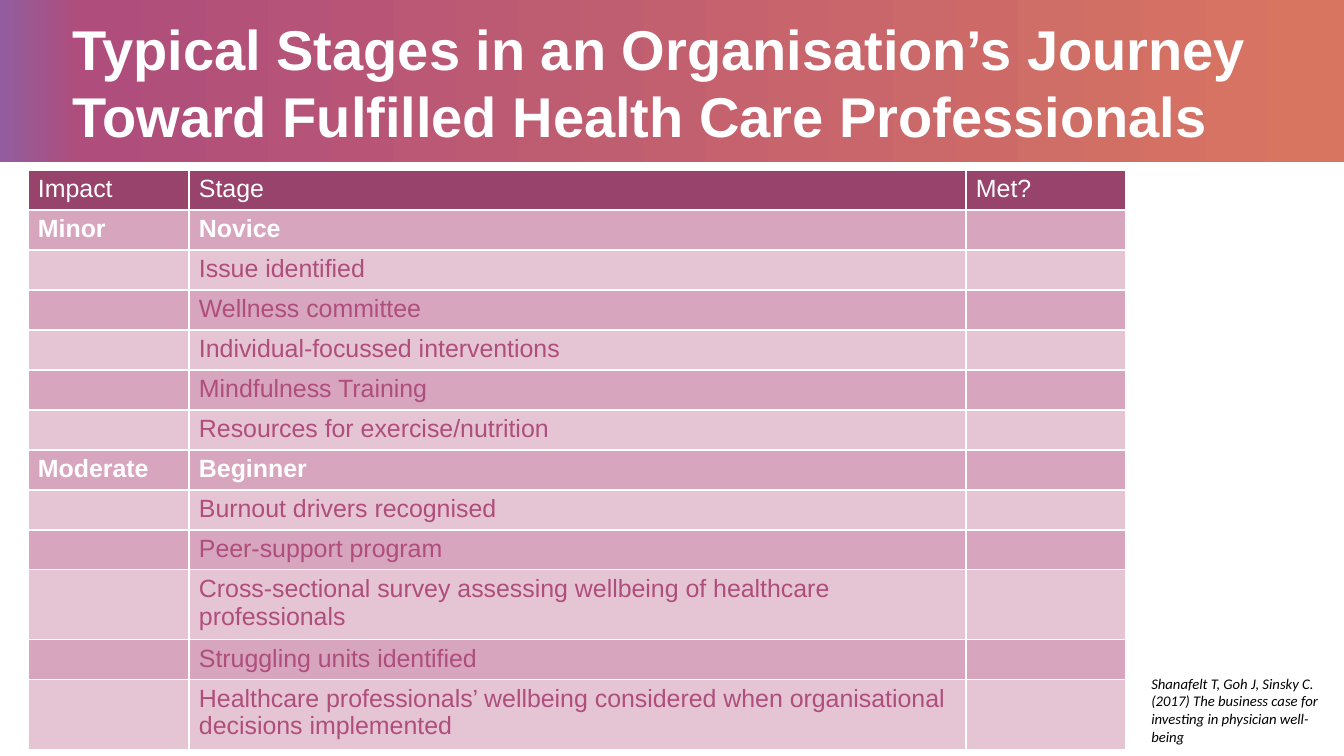
from copy import deepcopy

from lxml import etree
from pptx import Presentation, util as u
from pptx.dml.color import RGBColor
from pptx.enum import shapes, text
from pptx.oxml.ns import qn

# Content
TITLE = "Typical Stages in an Organisation’s Journey Toward Fulfilled Health Care Professionals"
HEADER = ("Impact", "Stage", "Met?")
STAGES = [
    ("Minor", "Novice", [
        "Issue identified",
        "Wellness committee",
        "Individual-focussed interventions",
        "Mindfulness Training",
        "Resources for exercise/nutrition",
    ]),
    ("Moderate", "Beginner", [
        "Burnout drivers recognised",
        "Peer-support program",
        "Cross-sectional survey assessing wellbeing of healthcare professionals",
        "Struggling units identified",
        "Healthcare professionals’ wellbeing considered when organisational "
        "decisions implemented",
    ]),
]
CITATION = ("Shanafelt T, Goh J, Sinsky C. (2017) The business case for "
            "investing in physician well-being")

THEME = {
    "white": "FFFFFF", "black": "000000", "accent": "AF4D7C",
    "header": "97436B", "bands": ("D7A5BD", "E5C5D4"),
    "gradient": ((0, "925D9E"), (6, "AF4D7C"), (99, "D87561")),
    "font": "Arial", "cite_font": "Calibri",
    "title_size": 42.7, "title_leading": 51.2, "table_size": 19, "cite_size": 11.2,
}

# Layout in px
SLIDE_W, SLIDE_H, BANNER_H = 1344, 756, 162
COLS = (161, 777, 160)
ROW_H, TALL_ROW_H, LINE_CHARS = 40, 69, 65
TABLE_X, TABLE_Y = 28, 170


def px(n):
    return u.Emu(round(n * 914400 / 94.5))


def rgb(hex_value):
    return RGBColor.from_string(hex_value)


def add_run(p, words, size, color, font=THEME["font"], bold=False, italic=False):
    r = p.add_run()
    r.text = words
    r.font.name, r.font.size = font, u.Pt(size)
    r.font.bold, r.font.italic = bold, italic
    r.font.color.rgb = rgb(color)


def add_text_box(s, x, y, w, h):
    tf = s.shapes.add_textbox(px(x), px(y), px(w), px(h)).text_frame
    tf.word_wrap = True
    return tf


def add_banner(s):
    sp = s.shapes.add_shape(shapes.MSO_SHAPE.RECTANGLE, 0, 0, px(SLIDE_W), px(BANNER_H))
    sp.shadow.inherit = False
    sp.line.fill.background()
    sp.fill.gradient()
    sp.fill.gradient_angle = 0
    stops = sp._element.spPr.find(qn("a:gradFill")).find(qn("a:gsLst"))
    stops.insert(1, deepcopy(stops[0]))
    for stop, (position, color) in zip(sp.fill.gradient_stops, THEME["gradient"]):
        stop.position = position / 100
        stop.color.rgb = rgb(color)


def add_borders(cell):
    tc_pr = cell._tc.get_or_add_tcPr()
    for i, side in enumerate(("lnL", "lnR", "lnT", "lnB")):
        ln = etree.Element(qn(f"a:{side}"), w=str(u.Pt(1)))
        fill = etree.SubElement(ln, qn("a:solidFill"))
        etree.SubElement(fill, qn("a:srgbClr"), val=THEME["white"])
        tc_pr.insert(i, ln)


def add_stage_table(s):
    # Each row: cell texts, text colour, bold
    rows = [(HEADER, THEME["white"], False)]
    for impact, stage, steps in STAGES:
        rows.append(((impact, stage, ""), THEME["white"], True))
        rows += [(("", step, ""), THEME["accent"], False) for step in steps]
    heights = [TALL_ROW_H if len(cells[1]) > LINE_CHARS else ROW_H for cells, _, _ in rows]

    table = s.shapes.add_table(len(rows), len(COLS), px(TABLE_X), px(TABLE_Y),
                               px(sum(COLS)), px(sum(heights))).table
    for column, width in zip(table.columns, COLS):
        column.width = px(width)
    for i, (cells, color, bold) in enumerate(rows):
        table.rows[i].height = px(heights[i])
        for j, words in enumerate(cells):
            cell = table.cell(i, j)
            cell.margin_left = cell.margin_right = px(10)
            cell.margin_top = cell.margin_bottom = px(5)
            cell.fill.solid()
            cell.fill.fore_color.rgb = rgb(THEME["bands"][(i - 1) % 2] if i else THEME["header"])
            add_borders(cell)
            if words:
                add_run(cell.text_frame.paragraphs[0], words, THEME["table_size"],
                        color, bold=bold)


def main():
    prs = Presentation()
    prs.slide_width, prs.slide_height = px(SLIDE_W), px(SLIDE_H)
    s = prs.slides.add_slide(prs.slide_layouts[6])

    # Banner and title
    add_banner(s)
    tf = add_text_box(s, 63, 9, 1234, 145)
    tf.vertical_anchor = text.MSO_ANCHOR.MIDDLE
    p = tf.paragraphs[0]
    p.line_spacing = u.Pt(THEME["title_leading"])
    add_run(p, TITLE, THEME["title_size"], THEME["white"], bold=True)

    # Stages
    add_stage_table(s)

    # Citation
    tf = add_text_box(s, 1142, 670, 202, 112)
    add_run(tf.paragraphs[0], CITATION, THEME["cite_size"], THEME["black"],
            font=THEME["cite_font"], italic=True)

    prs.save("out.pptx")


if __name__ == "__main__":
    main()
